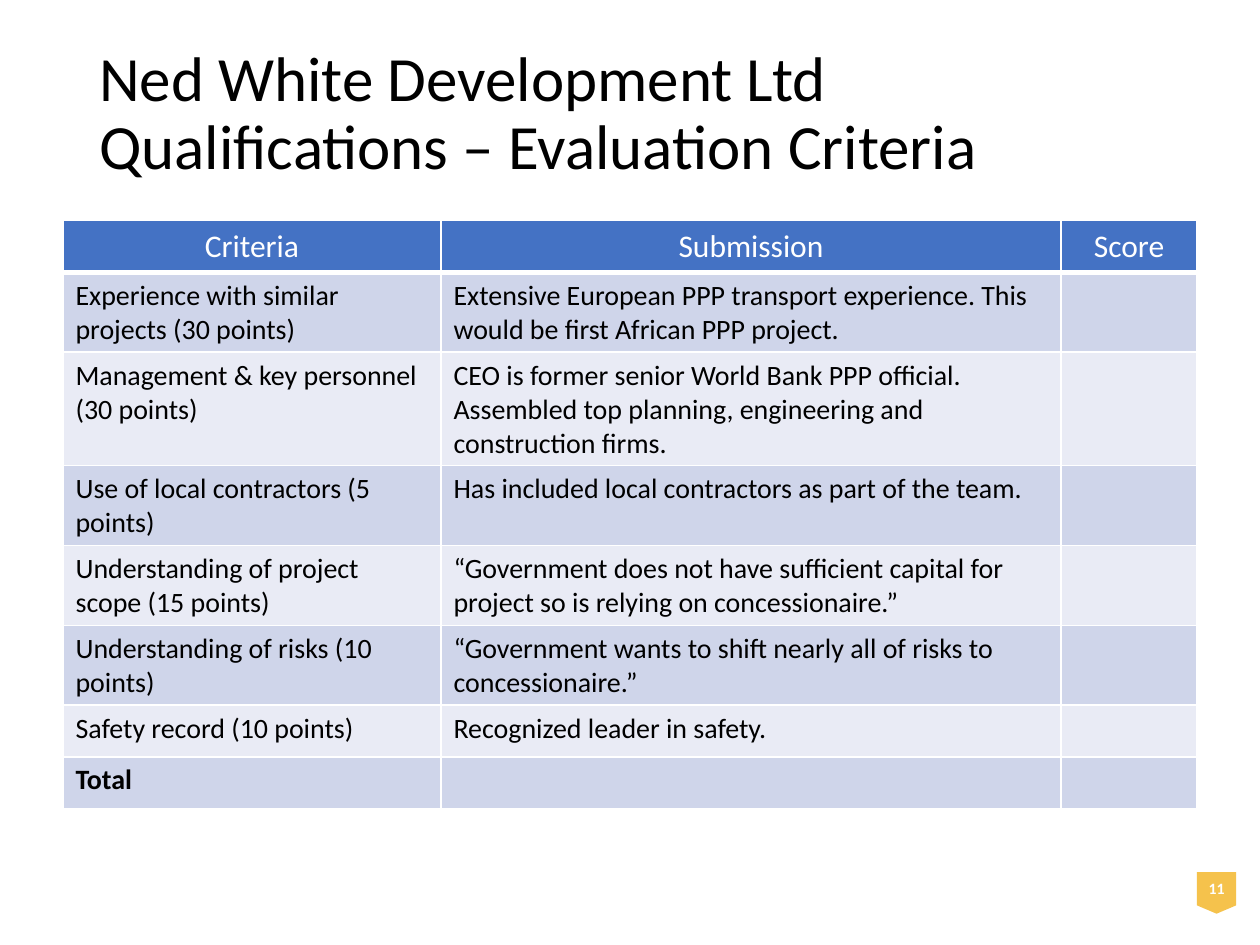
import dataclasses

import pptx
import pptx.dml.color
import pptx.enum.shapes
import pptx.enum.text
import pptx.oxml
import pptx.oxml.ns
import pptx.util

Cm = pptx.util.Cm
Pt = pptx.util.Pt
ALIGN = pptx.enum.text.PP_ALIGN
ANCHOR = pptx.enum.text.MSO_ANCHOR
SHAPE = pptx.enum.shapes.MSO_SHAPE


@dataclasses.dataclass(frozen=True)
class Theme:
    font: str = "Calibri"
    white: str = "FFFFFF"
    black: str = "000000"
    header: str = "4472C4"
    bands: tuple = ("CFD5EA", "E9EBF5")
    badge: str = "F5C24C"
    title_size: int = 36
    header_size: int = 18
    body_size: int = 16
    badge_size: int = 9
    rule: int = 1
    header_rule: int = 3


THEME = Theme()

TITLE = "Ned White Development Ltd Qualifications – Evaluation Criteria"
COLUMNS = [("Criteria", 7.62), ("Submission", 12.5), ("Score", 2.74)]
HEADER_HEIGHT = 1.04
# Criterion, submission, row height in cm; the score is left to fill in
CRITERIA = [
    ("Experience with similar projects (30 points)",
     "Extensive European PPP transport experience. This would be first African PPP project.", 1.6),
    ("Management & key personnel (30 points)",
     "CEO is former senior World Bank PPP official. "
     "Assembled top planning, engineering and construction firms.", 2.29),
    ("Use of local contractors (5 points)",
     "Has included local contractors as part of the team.", 1.6),
    ("Understanding of project scope (15 points)",
     "“Government does not have sufficient capital for project so is relying on concessionaire.”", 1.6),
    ("Understanding of risks (10 points)",
     "“Government wants to shift nearly all of risks to concessionaire.”", 1.6),
    ("Safety record (10 points)", "Recognized leader in safety.", 1.04),
    ("Total", "", 1.04),
]


def rgb(value):
    return pptx.dml.color.RGBColor.from_string(value)


def apply_format(target, values):
    for name, value in values.items():
        setattr(target, name, value)


def write_text(text_frame, text, size, color, bold=False, **paragraph_format):
    paragraph = text_frame.paragraphs[0]
    apply_format(paragraph, paragraph_format)
    run = paragraph.add_run()
    run.text = text
    apply_format(run.font, {"name": THEME.font, "size": Pt(size), "bold": bold})
    run.font.color.rgb = rgb(color)


def add_filled_shape(slide, kind, box, color):
    shape = slide.shapes.add_shape(kind, *map(Cm, box))
    shape.shadow.inherit = False
    shape.fill.solid()
    shape.fill.fore_color.rgb = rgb(color)
    shape.line.fill.background()
    return shape


def set_borders(cell, bottom):
    """Rule all four sides; border elements come before the cell fill."""
    properties = cell._tc.get_or_add_tcPr()
    widths = {"lnL": THEME.rule, "lnR": THEME.rule, "lnT": THEME.rule, "lnB": bottom}
    for index, (side, width) in enumerate(widths.items()):
        properties.insert(index, pptx.oxml.parse_xml(
            f'<a:{side} {pptx.oxml.ns.nsdecls("a")} w="{Pt(width)}"><a:solidFill>'
            f'<a:srgbClr val="{THEME.white}"/></a:solidFill></a:{side}>'))


def fill_cell(cell, text, fill, bottom, **text_format):
    cell.fill.solid()
    cell.fill.fore_color.rgb = rgb(fill)
    set_borders(cell, bottom)
    if text:
        write_text(cell.text_frame, text, **text_format)


def add_footer(slide, box):
    left, top, width, height = box
    add_filled_shape(slide, SHAPE.RECTANGLE, box, THEME.white)
    # Page number badge
    badge = add_filled_shape(slide, SHAPE.FLOWCHART_OFFPAGE_CONNECTOR,
                             (left + width - 1.27, top + 0.79, 0.79, 0.84), THEME.badge)
    apply_format(badge.text_frame, {
        "margin_left": Cm(0.18), "margin_right": Cm(0.18),
        "margin_top": Cm(0.1), "margin_bottom": Cm(0.1),
        "vertical_anchor": ANCHOR.MIDDLE, "word_wrap": False})
    write_text(badge.text_frame, "11", THEME.badge_size, THEME.white, bold=True,
               alignment=ALIGN.CENTER)


def add_title(slide, box):
    text_frame = slide.shapes.add_textbox(*map(Cm, box)).text_frame
    apply_format(text_frame, {"word_wrap": True, "vertical_anchor": ANCHOR.MIDDLE})
    write_text(text_frame, TITLE, THEME.title_size, THEME.black, line_spacing=0.9)


def add_criteria_table(slide, box):
    table = slide.shapes.add_table(len(CRITERIA) + 1, len(COLUMNS), *map(Cm, box)).table
    # Header row
    table.rows[0].height = Cm(HEADER_HEIGHT)
    for index, (heading, width) in enumerate(COLUMNS):
        table.columns[index].width = Cm(width)
        fill_cell(table.cell(0, index), heading, THEME.header, THEME.header_rule,
                  size=THEME.header_size, color=THEME.white, alignment=ALIGN.CENTER)
    # Banded criteria rows
    for row, (criterion, submission, height) in enumerate(CRITERIA, start=1):
        table.rows[row].height = Cm(height)
        band = THEME.bands[(row - 1) % 2]
        for column, text in enumerate((criterion, submission, "")):
            fill_cell(table.cell(row, column), text, band, THEME.rule,
                      size=THEME.body_size, color=THEME.black, bold=text == "Total")


def main():
    presentation = pptx.Presentation()
    apply_format(presentation, {"slide_width": Cm(25.4), "slide_height": Cm(19.05)})
    slide = presentation.slides.add_slide(presentation.slide_layouts[6])
    add_footer(slide, (0, 16.79, 25.4, 2.26))
    add_title(slide, (1.75, 1.02, 19.81, 2.62))
    table_height = HEADER_HEIGHT + sum(height for *_, height in CRITERIA)
    add_criteria_table(slide, (1.27, 4.45, sum(width for _, width in COLUMNS), table_height))
    presentation.save("out.pptx")


if __name__ == "__main__":
    main()
